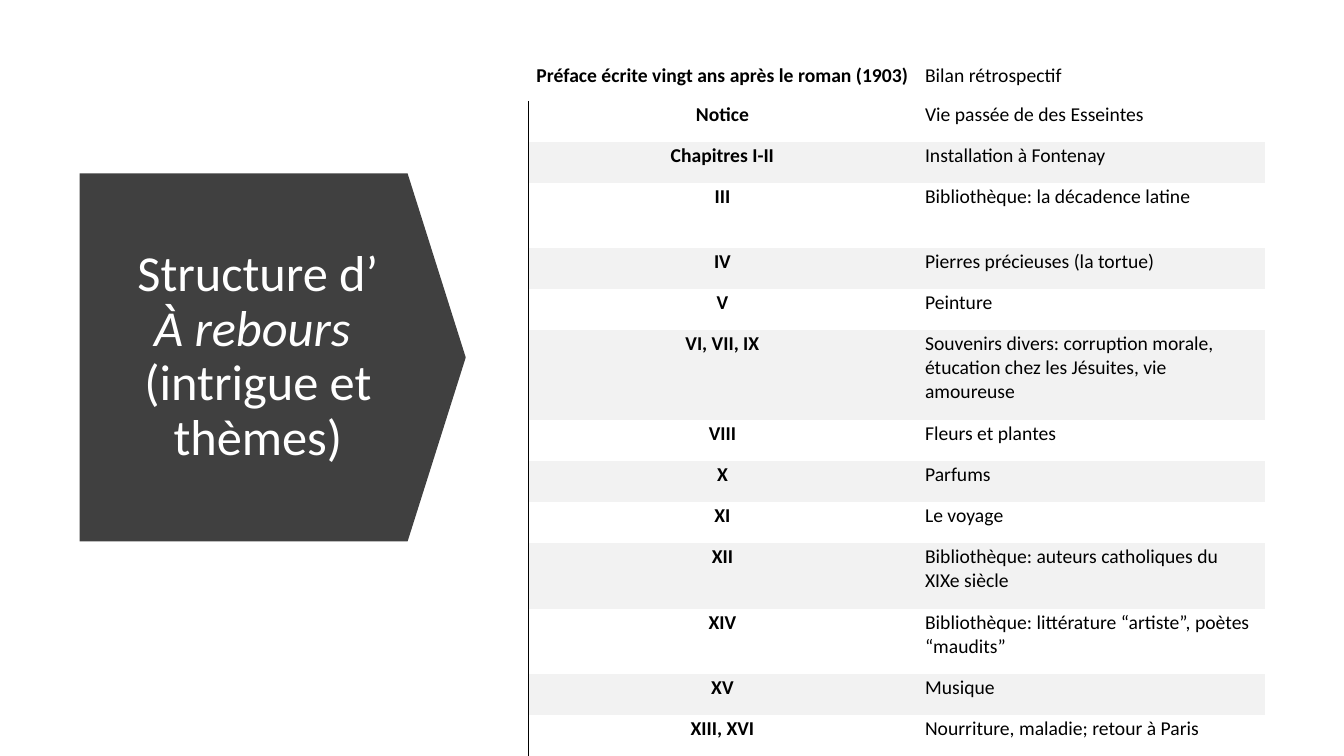
import dataclasses

import pptx
import pptx.dml.color
import pptx.enum.shapes
import pptx.enum.text
import pptx.oxml
import pptx.oxml.ns
import pptx.presentation
import pptx.slide
import pptx.table
import pptx.util

Pt = pptx.util.Pt
RGBColor = pptx.dml.color.RGBColor
PP_ALIGN = pptx.enum.text.PP_ALIGN
MSO_ANCHOR = pptx.enum.text.MSO_ANCHOR

BLACK = RGBColor(0x00, 0x00, 0x00)
WHITE = RGBColor(0xFF, 0xFF, 0xFF)
CHARCOAL = RGBColor(0x40, 0x40, 0x40)
BAND = RGBColor(0xF2, 0xF2, 0xF2)

FONT = "Calibri"
HEADER_HEIGHT = 50.4
LINE_HEIGHT = 29.3
EXTRA_LINE = 17.5
NO_STYLE = "{2D5ABB26-0587-4C30-8999-92F81FD0307C}"


@dataclasses.dataclass(frozen=True)
class Section:
    chapters: str
    theme: str
    lines: int = 1
    spacing: float = 14


SECTIONS = [
    Section("Préface écrite vingt ans après le roman (1903)", "Bilan rétrospectif"),
    Section("Notice", "Vie passée de des Esseintes"),
    Section("Chapitres I-II", "Installation à Fontenay"),
    Section("III", "Bibliothèque: la décadence latine", 2, 0),
    Section("IV", "Pierres précieuses (la tortue)"),
    Section("V", "Peinture"),
    Section("VI, VII, IX", "Souvenirs divers: corruption morale, "
            "étucation chez les Jésuites, vie amoureuse", 3),
    Section("VIII", "Fleurs et plantes"),
    Section("X", "Parfums"),
    Section("XI", "Le voyage"),
    Section("XII", "Bibliothèque: auteurs catholiques du XIXe siècle", 2),
    Section("XIV", "Bibliothèque: littérature “artiste”, poètes “maudits”", 2),
    Section("XV", "Musique"),
    Section("XIII, XVI", "Nourriture, maladie; retour à Paris"),
]


def add_title(s: pptx.slide.Slide) -> None:
    title = s.shapes.title
    title.left, title.top, title.width, title.height = Pt(80.6), Pt(154.8), Pt(207.4), Pt(200.9)
    tf = title.text_frame
    tf.word_wrap = True
    tf.auto_size = pptx.enum.text.MSO_AUTO_SIZE.NONE
    tf.vertical_anchor = MSO_ANCHOR.MIDDLE
    p = tf.paragraphs[0]
    p.alignment = PP_ALIGN.CENTER
    p.line_spacing = 0.9
    p.font.name, p.font.size = FONT, Pt(36)
    p.font.color.rgb = WHITE
    p.add_run().text = "Structure d’"
    r = p.add_run()
    r.text = " À rebours "
    r.font.italic = True
    p.add_line_break()
    p.add_run().text = "(intrigue et thèmes)"


def add_arrow(s: pptx.slide.Slide) -> None:
    sp = s.shapes.add_shape(pptx.enum.shapes.MSO_SHAPE.DOWN_ARROW,
                            Pt(63.4), Pt(117.4), Pt(262.8), Pt(275.8))
    sp.rotation = 270
    sp.adjustments[0] = 1
    sp.adjustments[1] = 0.158
    sp.shadow.inherit = False
    sp.fill.solid()
    sp.fill.fore_color.rgb = CHARCOAL
    sp.line.fill.background()
    s.shapes.title.element.addprevious(sp.element)


def add_left_border(cell: pptx.table._Cell) -> None:
    ln = pptx.oxml.parse_xml(
        f'<a:lnL {pptx.oxml.ns.nsdecls("a")} w="{Pt(0.75)}"><a:solidFill>'
        f'<a:srgbClr val="{BLACK}"/></a:solidFill></a:lnL>')
    cell.fill
    cell._tc.get_or_add_tcPr().insert(0, ln)


def fill_cell(cell: pptx.table._Cell, text: str, spacing: float,
              heading: bool, first: bool, banded: bool) -> None:
    cell.margin_left, cell.margin_top = Pt(4.5), Pt(1.3)
    cell.margin_right, cell.margin_bottom = Pt(6), Pt(9.6)
    cell.vertical_anchor = MSO_ANCHOR.BOTTOM if first else MSO_ANCHOR.TOP
    if banded:
        cell.fill.solid()
        cell.fill.fore_color.rgb = BAND
    else:
        cell.fill.background()
    p = cell.text_frame.paragraphs[0]
    p.add_run().text = text
    p.alignment = PP_ALIGN.CENTER if heading else PP_ALIGN.LEFT
    p.space_before = p.space_after = Pt(spacing)
    p.font.name, p.font.size, p.font.bold = FONT, Pt(14), heading
    p.font.color.rgb = BLACK
    if heading and not first:
        add_left_border(cell)


def add_sections(s: pptx.slide.Slide) -> None:
    heights = [HEADER_HEIGHT] + [LINE_HEIGHT + EXTRA_LINE * (section.lines - 1)
                                 for section in SECTIONS[1:]]
    widths = (279, 247)
    table = s.shapes.add_table(len(SECTIONS), 2, Pt(377.3), Pt(21.6),
                               Pt(sum(widths)), Pt(sum(heights))).table
    table.first_row = table.horz_banding = False
    table._tbl.tblPr.find(pptx.oxml.ns.qn("a:tableStyleId")).text = NO_STYLE
    for column, width in zip(table.columns, widths):
        column.width = Pt(width)
    for i, (section, height) in enumerate(zip(SECTIONS, heights)):
        table.rows[i].height = Pt(height)
        first, banded = i == 0, i > 0 and i % 2 == 0
        fill_cell(table.cell(i, 0), section.chapters, 14, True, first, banded)
        fill_cell(table.cell(i, 1), section.theme, section.spacing, False, first, banded)


def main() -> None:
    prs = pptx.Presentation()
    prs.slide_width, prs.slide_height = Pt(960), Pt(540)
    s = prs.slides.add_slide(prs.slide_layouts[5])
    add_title(s)
    add_arrow(s)
    add_sections(s)
    prs.save("out.pptx")


if __name__ == "__main__":
    main()
